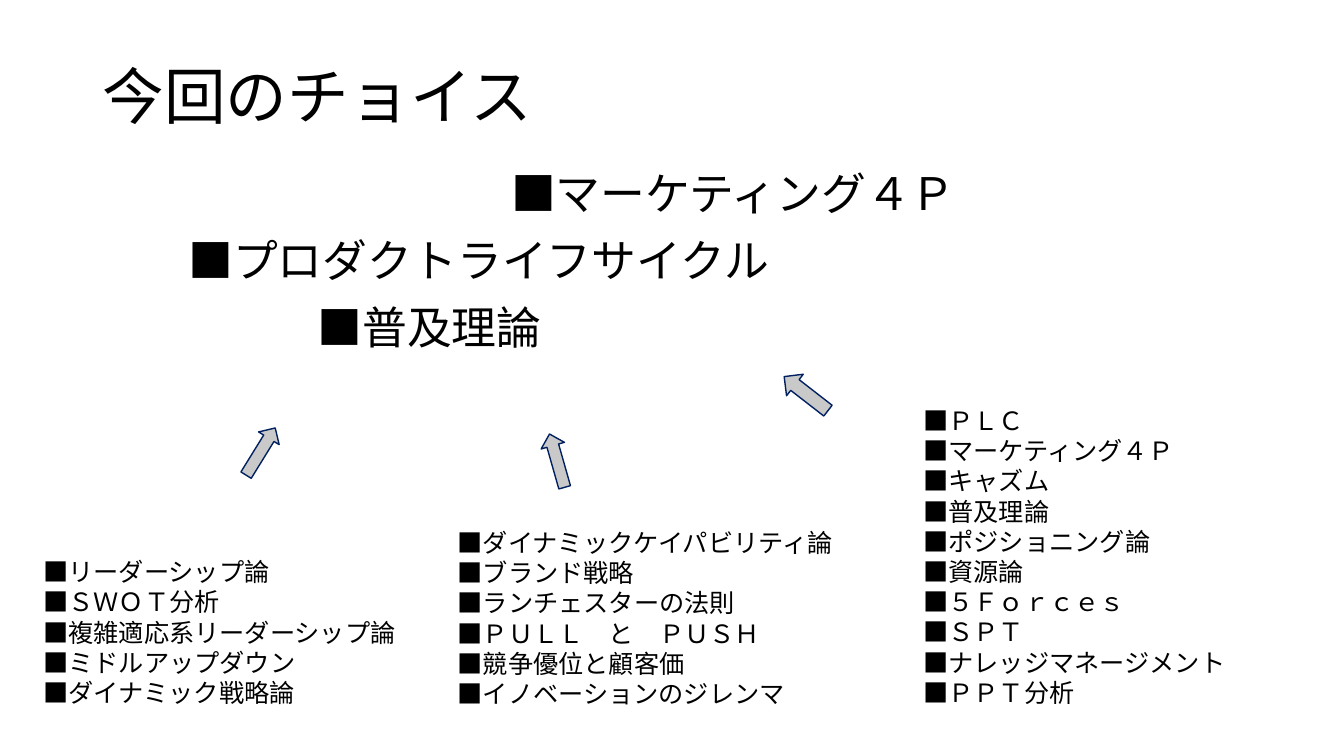
from lxml import etree
from pptx import Presentation
from pptx import util as u
from pptx.dml import color
from pptx.enum import shapes, text
from pptx.oxml import ns


def rgb(value):
    return color.RGBColor.from_string(value)


class SlideBuilder:
    font = "Noto Sans CJK JP"
    ink = "000000"
    arrow_fill = "C9C9C9"
    arrow_line = "002060"

    def __init__(self, slide):
        self.slide = slide

    def add_run(self, paragraph, wording, size):
        run = paragraph.add_run()
        run.text = wording
        run.font.size = u.Pt(size)
        run.font.name = self.font
        run.font.color.rgb = rgb(self.ink)
        east_asian = etree.SubElement(run.font._element, ns.qn("a:ea"))
        east_asian.set("typeface", self.font)

    def add_text(self, place, lines, size, wrap=True):
        frame = self.slide.shapes.add_textbox(*map(u.Inches, place)).text_frame
        frame.word_wrap = wrap
        frame.auto_size = text.MSO_AUTO_SIZE.SHAPE_TO_FIT_TEXT
        for index, line in enumerate(lines):
            paragraph = frame.add_paragraph() if index else frame.paragraphs[0]
            self.add_run(paragraph, line, size)
        return frame

    def add_title(self, place, wording):
        frame = self.add_text(place, [wording], 44)
        frame.auto_size = text.MSO_AUTO_SIZE.NONE
        frame.vertical_anchor = text.MSO_ANCHOR.MIDDLE
        frame.paragraphs[0].line_spacing = 0.9

    def add_arrow(self, place, rotation):
        arrow = self.slide.shapes.add_shape(
            shapes.MSO_SHAPE.RIGHT_ARROW, *map(u.Inches, place))
        arrow.rotation = rotation
        arrow.shadow.inherit = False
        arrow.fill.solid()
        arrow.fill.fore_color.rgb = rgb(self.arrow_fill)
        arrow.line.color.rgb = rgb(self.arrow_line)
        arrow.line.width = u.Pt(1)


CHOICES = [
    ((1.77, 2.26, 6.04, 0.64), "■プロダクトライフサイクル"),
    ((3.05, 2.92, 2.45, 0.64), "■普及理論"),
    ((4.97, 1.59, 4.69, 0.64), "■マーケティング４Ｐ"),
]

CANDIDATES = [
    ((4.44, 5.18, 4.29, 1.92), [
        "■ダイナミックケイパビリティ論",
        "■ブランド戦略",
        "■ランチェスターの法則",
        "■ＰＵＬＬ　と　ＰＵＳＨ",
        "■競争優位と顧客価",
        "■イノベーションのジレンマ",
    ]),
    ((9.06, 3.97, 4.27, 3.13), [
        "■ＰＬＣ",
        "■マーケティング４Ｐ",
        "■キャズム",
        "■普及理論",
        "■ポジショニング論",
        "■資源論",
        "■５Ｆｏｒｃｅｓ",
        "■ＳＰＴ",
        "■ナレッジマネージメント",
        "■ＰＰＴ分析",
    ]),
    ((0.33, 5.47, 4.29, 1.62), [
        "■リーダーシップ論",
        "■ＳＷＯＴ分析",
        "■複雑適応系リーダーシップ論",
        "■ミドルアップダウン",
        "■ダイナミック戦略論",
    ]),
]

ARROWS = [
    ((5.25, 4.45, 0.55, 0.24), 254.1),
    ((2.31, 4.36, 0.55, 0.24), 301.7),
    ((7.72, 3.77, 0.55, 0.27), 217.8),
]


def main():
    deck = Presentation()
    deck.slide_width = u.Inches(13.33)
    deck.slide_height = u.Inches(7.5)
    builder = SlideBuilder(deck.slides.add_slide(deck.slide_layouts[6]))
    builder.add_title((0.92, 0.4, 11.73, 1.18), "今回のチョイス")
    for place, choice in CHOICES:
        builder.add_text(place, [choice], 32, wrap=False)
    for place, theories in CANDIDATES:
        builder.add_text(place, theories, 18)
    for place, rotation in ARROWS:
        builder.add_arrow(place, rotation)
    deck.save("out.pptx")


if __name__ == "__main__":
    main()
